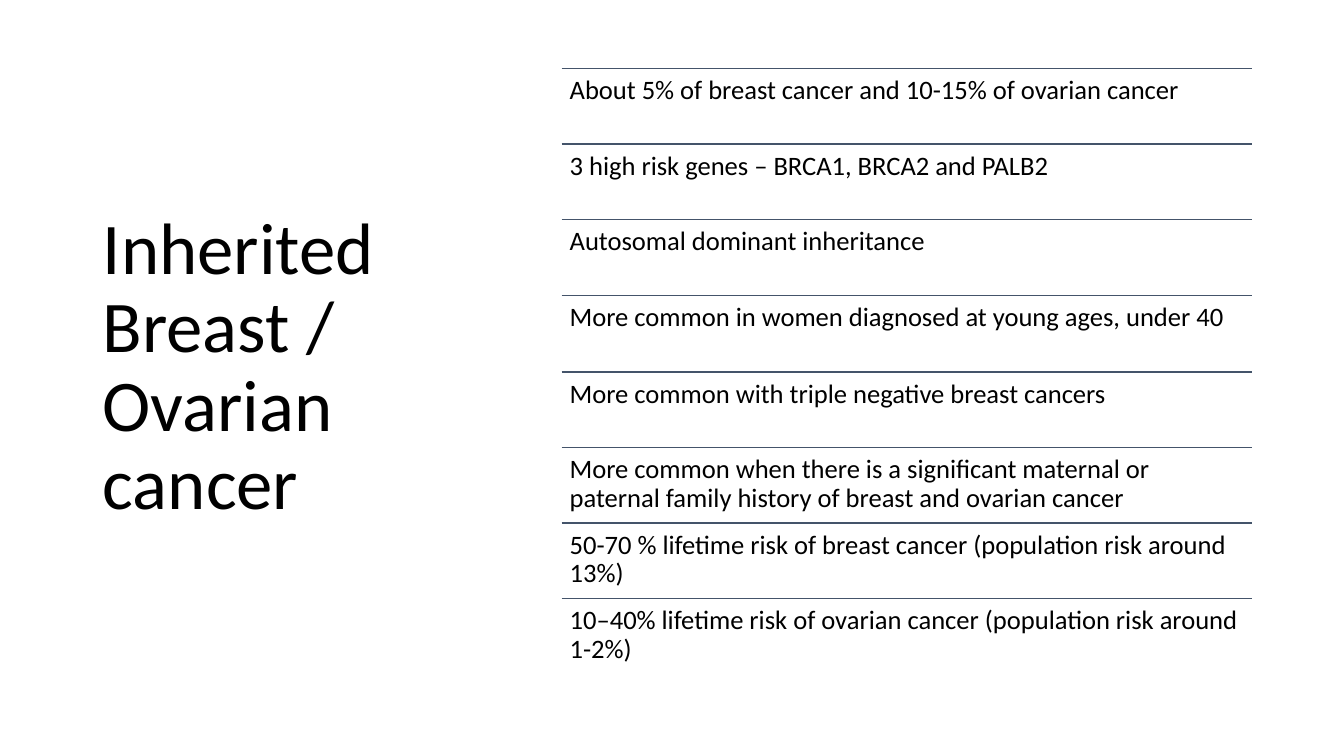
from dataclasses import dataclass

import pptx
import pptx.dml.color
import pptx.enum.shapes
import pptx.enum.text
import pptx.oxml.xmlchemy
import pptx.util
from lxml import etree

PX = 9144  # EMU per px, 100 px to the inch
TITLE_ONLY = 5
FACTS = [
    "About 5% of breast cancer and 10-15% of ovarian cancer",
    "3 high risk genes – BRCA1, BRCA2 and PALB2",
    "Autosomal dominant inheritance",
    "More common in women diagnosed at young ages, under 40",
    "More common with triple negative breast cancers",
    "More common when there is a significant maternal or paternal family history "
    "of breast and ovarian cancer",
    "50-70 % lifetime risk of breast cancer (population risk around 13%)",
    "10–40% lifetime risk of ovarian cancer (population risk around 1-2%)",
]


@dataclass(frozen=True)
class Theme:
    font: str = "Calibri"
    text: str = "000000"
    rule: str = "44546A"
    title_size: int = 52
    fact_size: int = 19
    rule_width: int = 1


def px(*lengths):
    return [pptx.util.Emu(n * PX) for n in lengths]


def rgb(code):
    return pptx.dml.color.RGBColor.from_string(code)


def write(tf, text, *, size, color, font, anchor, margins=None):
    """Fill a text frame with one left-aligned paragraph."""
    tf.word_wrap = True
    tf.auto_size = pptx.enum.text.MSO_AUTO_SIZE.NONE
    tf.vertical_anchor = anchor
    if margins is not None:
        inset = px(margins)[0]
        tf.margin_left = tf.margin_top = tf.margin_right = tf.margin_bottom = inset
    p = tf.paragraphs[0]
    p.alignment = pptx.enum.text.PP_ALIGN.LEFT
    p.line_spacing = 0.9
    r = p.add_run()
    r.text = text
    r.font.name = font
    r.font.size = pptx.util.Pt(size)
    r.font.color.rgb = rgb(color)


class SlideBuilder:
    def __init__(self, prs, theme):
        self.theme = theme
        self.slide = prs.slides.add_slide(prs.slide_layouts[TITLE_ONLY])

    def title(self, text, x, y, w, h):
        sp = self.slide.shapes.title
        sp.left, sp.top, sp.width, sp.height = px(x, y, w, h)
        write(sp.text_frame, text, size=self.theme.title_size,
              color=self.theme.text, font=self.theme.font,
              anchor=pptx.enum.text.MSO_ANCHOR.MIDDLE)

    def rule(self, x, y, w):
        line = self.slide.shapes.add_connector(
            pptx.enum.shapes.MSO_CONNECTOR.STRAIGHT, *px(x, y, x + w, y))
        line.line.color.rgb = rgb(self.theme.rule)
        line.line.width = pptx.util.Pt(self.theme.rule_width)
        etree.SubElement(line._element.spPr, pptx.oxml.ns.qn("a:effectLst"))

    def fact(self, text, x, y, w, h):
        sp = self.slide.shapes.add_textbox(*px(x, y, w, h))
        write(sp.text_frame, text, size=self.theme.fact_size,
              color=self.theme.text, font=self.theme.font,
              anchor=pptx.enum.text.MSO_ANCHOR.TOP, margins=8)

    def ruled_list(self, facts, x, y, w, h):
        """Share the height equally between facts, with a rule above each."""
        for i, text in enumerate(facts):
            top = y + i * h // len(facts)
            self.rule(x, top, w)
            self.fact(text, x, top, w, h // len(facts))


def main():
    prs = pptx.Presentation()
    prs.slide_width, prs.slide_height = px(1333, 750)
    s = SlideBuilder(prs, Theme())
    s.title("Inherited Breast / Ovarian cancer", 92, 61, 369, 609)
    s.ruled_list(FACTS, 557, 68, 685, 602)
    prs.save("out.pptx")


if __name__ == "__main__":
    main()
